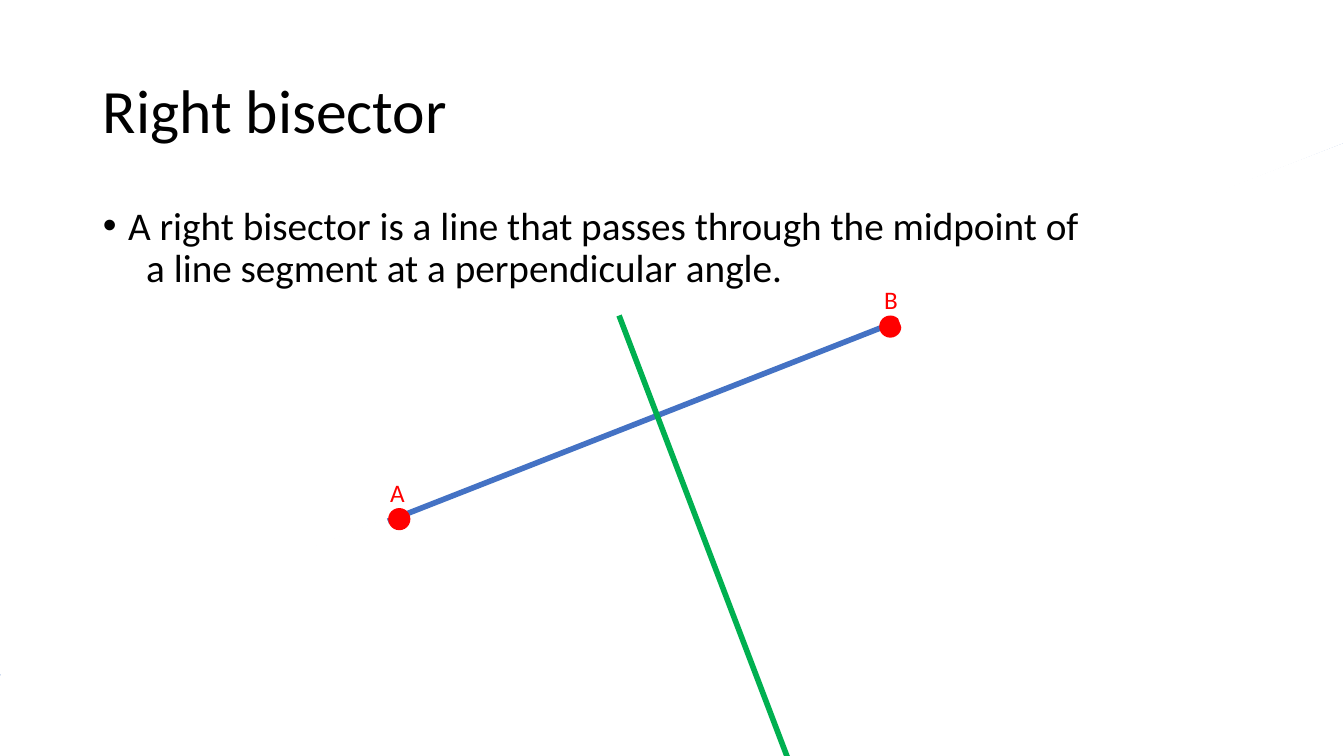
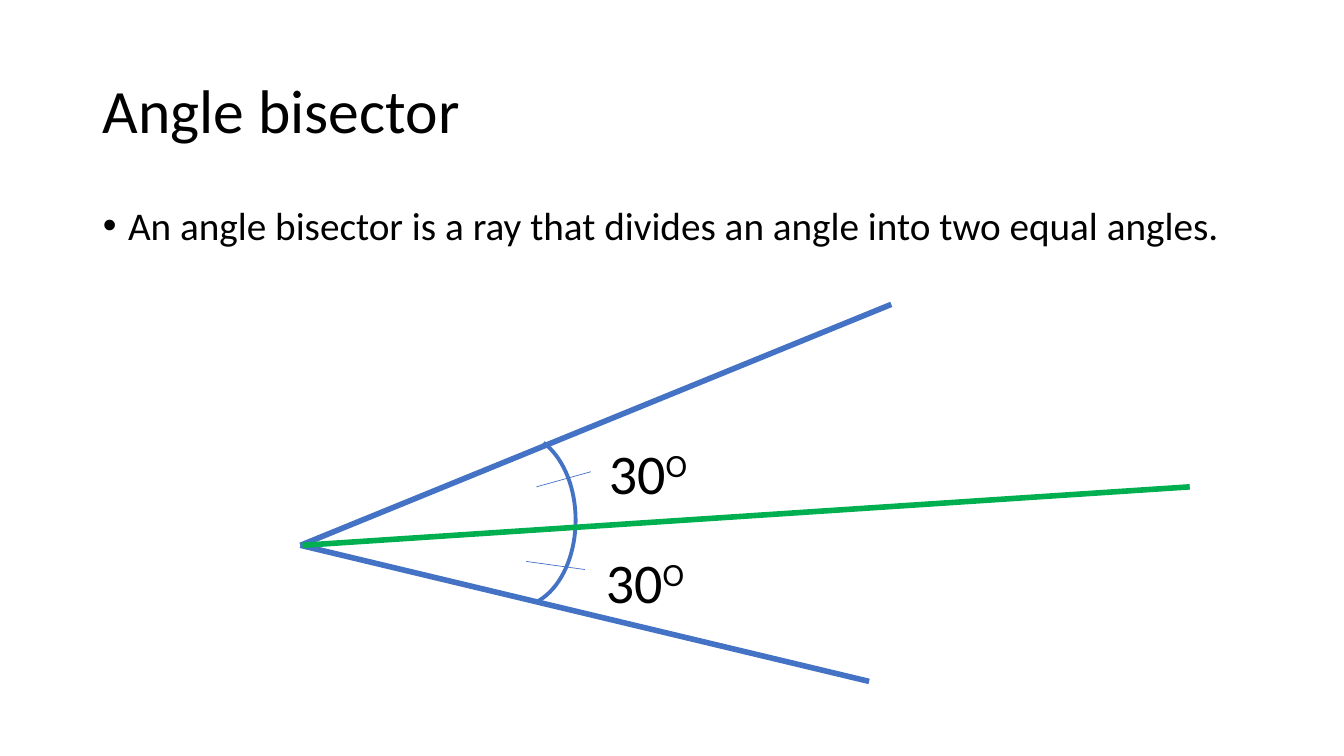
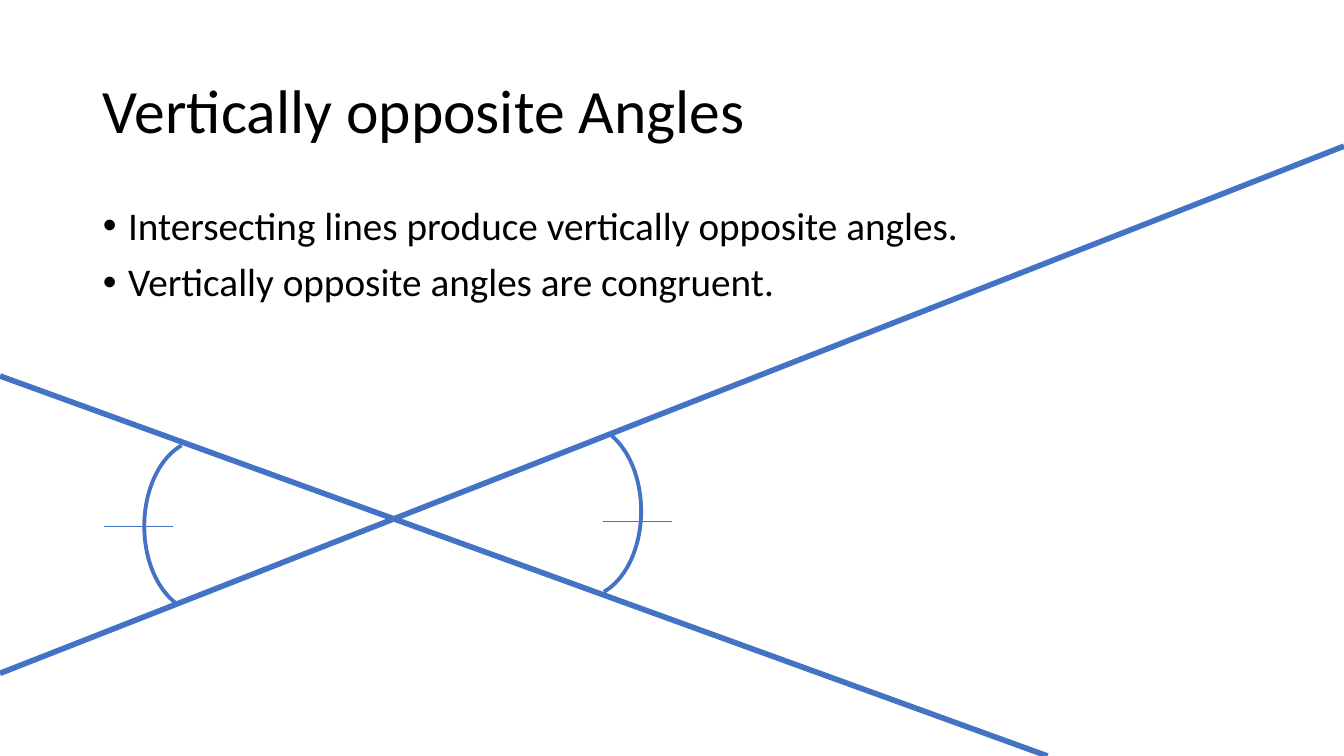
from lxml import etree
from pptx import Presentation
from pptx import util as u
from pptx.dml.color import RGBColor
from pptx.enum import shapes, text
from pptx.oxml.ns import qn

BLUE = RGBColor(0x44, 0x72, 0xC4)
GREEN = RGBColor(0x00, 0xB0, 0x50)
RED = RGBColor(0xFF, 0x00, 0x00)
BLACK = RGBColor(0x00, 0x00, 0x00)
WHITE = RGBColor(0xFF, 0xFF, 0xFF)
FONT = "Calibri"

TITLE_BOX = (0.92, 0.4, 11.5, 1.45)
BODY_BOX = (0.92, 2, 11.5, 4.76)
THICK, MEDIUM, THIN = 4, 2.75, 0.5
DOT = 0.22
ARC_SIZE = (1.16, 1.72)
ARC_DEGREES = (288.8, 75.3)
DEGREE_TO_ADJUSTMENT = 0.6


def place(shape, box):
    shape.left, shape.top, shape.width, shape.height = map(u.Inches, box)


def format_paragraph(paragraph, size, color):
    for run in paragraph.runs:
        run.font.name = FONT
        run.font.size = u.Pt(size)
        run.font.color.rgb = color


def add_heading_slide(presentation, title, lines):
    """Add a slide with a title and a list of (text, has bullet) lines."""
    slide = presentation.slides.add_slide(presentation.slide_layouts[1])
    heading, body = slide.placeholders

    place(heading, TITLE_BOX)
    heading.text_frame.text = title
    heading.text_frame.vertical_anchor = text.MSO_ANCHOR.MIDDLE
    heading.text_frame.auto_size = text.MSO_AUTO_SIZE.NONE
    paragraph = heading.text_frame.paragraphs[0]
    paragraph.alignment = text.PP_ALIGN.LEFT
    paragraph.line_spacing = 0.9
    format_paragraph(paragraph, 44, BLACK)

    place(body, BODY_BOX)
    frame = body.text_frame
    frame.text = "\n".join(line for line, _ in lines)
    frame.auto_size = text.MSO_AUTO_SIZE.NONE
    for index, (paragraph, (_, has_bullet)) in enumerate(zip(frame.paragraphs, lines)):
        paragraph.line_spacing = 0.9
        paragraph.space_before = u.Pt(10 if index and has_bullet else 0)
        properties = paragraph._p.get_or_add_pPr()
        properties.set("marL", str(u.Inches(0.25 if has_bullet else 0.43)))
        properties.set("indent", str(u.Inches(-0.25 if has_bullet else 0)))
        if not has_bullet:
            etree.SubElement(properties, qn("a:buNone"))
        format_paragraph(paragraph, 28, BLACK)
    return slide


def add_line(slide, origin, start, end, color=BLUE, width=THICK):
    """Draw a line whose ends are measured from the origin."""
    points = [u.Inches(base + offset) for point in (start, end)
              for base, offset in zip(origin, point)]
    line = slide.shapes.add_connector(shapes.MSO_CONNECTOR.STRAIGHT, *points)
    line.line.color.rgb = color
    line.line.width = u.Pt(width)
    etree.SubElement(line._element.spPr, qn("a:effectLst"))


def add_arc(slide, left, top, rotation=0):
    arc = slide.shapes.add_shape(
        shapes.MSO_SHAPE.ARC, *map(u.Inches, (left, top, *ARC_SIZE)))
    for index, degrees in enumerate(ARC_DEGREES):
        arc.adjustments[index] = degrees * DEGREE_TO_ADJUSTMENT
    arc.rotation = rotation
    arc.shadow.inherit = False
    arc.fill.background()
    arc.line.color.rgb = BLUE
    arc.line.width = u.Pt(MEDIUM)


def add_label(slide, box, label, size, color, superscript=""):
    frame = slide.shapes.add_textbox(*map(u.Inches, box)).text_frame
    frame.word_wrap = True
    frame.text = label
    paragraph = frame.paragraphs[0]
    if superscript:
        run = paragraph.add_run()
        run.text = superscript
        run._r.get_or_add_rPr().set("baseline", "30000")
    format_paragraph(paragraph, size, color)


def add_dot(slide, x, y):
    dot = slide.shapes.add_shape(
        shapes.MSO_SHAPE.OVAL,
        *map(u.Inches, (x - DOT / 2, y - DOT / 2, DOT, DOT)))
    dot.shadow.inherit = False
    dot.fill.solid()
    dot.fill.fore_color.rgb = RED
    dot.line.fill.background()


def draw_right_bisector(slide, point_a):
    """Draw a full line, hide it outside A and B, and bisect the segment."""
    x, y = point_a
    line_start, line_end = (-3.96, 1.53), (9.37, -3.7)
    add_line(slide, point_a, line_start, line_end)
    for left, top in ((0, 0), (4.87, -1.91)):
        add_dot(slide, x + left, y + top)
    for name, left, top in (("A", -0.19, -0.46), ("B", 4.71, -2.38)):
        add_label(slide, (x + left, y + top, 1.28, 0.4), name, 18, RED)
    add_line(slide, point_a, line_start, (-0.11, 0.03), WHITE, 6.5)
    add_line(slide, point_a, (4.96, -1.96), (9.41, -3.68), WHITE, 9)
    add_line(slide, point_a, (3.89, 2.47), (2.18, -2.02), GREEN)


def draw_angle_bisector(slide, vertex):
    x, y = vertex
    for arm_end in ((5.64, 1.35), (5.86, -2.39)):
        add_line(slide, vertex, (0, 0), arm_end)
    add_arc(slide, x + 1.57, y - 1.11)
    add_line(slide, vertex, (0.02, 0), (8.82, -0.58), GREEN)
    for left, top in ((2.96, -1.11), (2.93, -0.03)):
        add_label(slide, (x + left, y + top, 2.69, 0.77), "30", 40, BLACK, "O")
    for start, end in (((2.34, -0.58), (2.88, -0.73)),
                       ((2.24, 0.16), (2.82, 0.24))):
        add_line(slide, vertex, start, end, width=THIN)


def draw_opposite_angles(slide, crossing):
    x, y = crossing
    add_line(slide, crossing, (-3.91, 1.53), (9.42, -3.7))
    add_line(slide, crossing, (-3.91, -1.42), (6.48, 2.35))
    add_arc(slide, x + 1.29, y - 0.94)
    add_arc(slide, x - 2.48, y - 0.79, rotation=180)
    for left, top in ((-2.88, 0.07), (2.07, 0.02)):
        add_line(slide, crossing, (left, top), (left + 0.69, top), width=THIN)


def main():
    presentation = Presentation()
    presentation.slide_width = u.Inches(13.33)
    presentation.slide_height = u.Inches(7.5)

    slide = add_heading_slide(presentation, "Right bisector", [
        ("A right bisector is a line that passes through the midpoint of", True),
        ("a line segment at a perpendicular angle.", False)])
    draw_right_bisector(slide, (3.96, 5.15))

    slide = add_heading_slide(presentation, "Angle bisector", [
        ("An angle bisector is a ray that divides an angle into two equal angles.", True)])
    draw_angle_bisector(slide, (2.98, 5.41))

    slide = add_heading_slide(presentation, "Vertically opposite Angles", [
        ("Intersecting lines produce vertically opposite angles.", True),
        ("Vertically opposite angles are congruent.", True)])
    draw_opposite_angles(slide, (3.91, 5.15))

    presentation.save("out.pptx")


if __name__ == "__main__":
    main()
